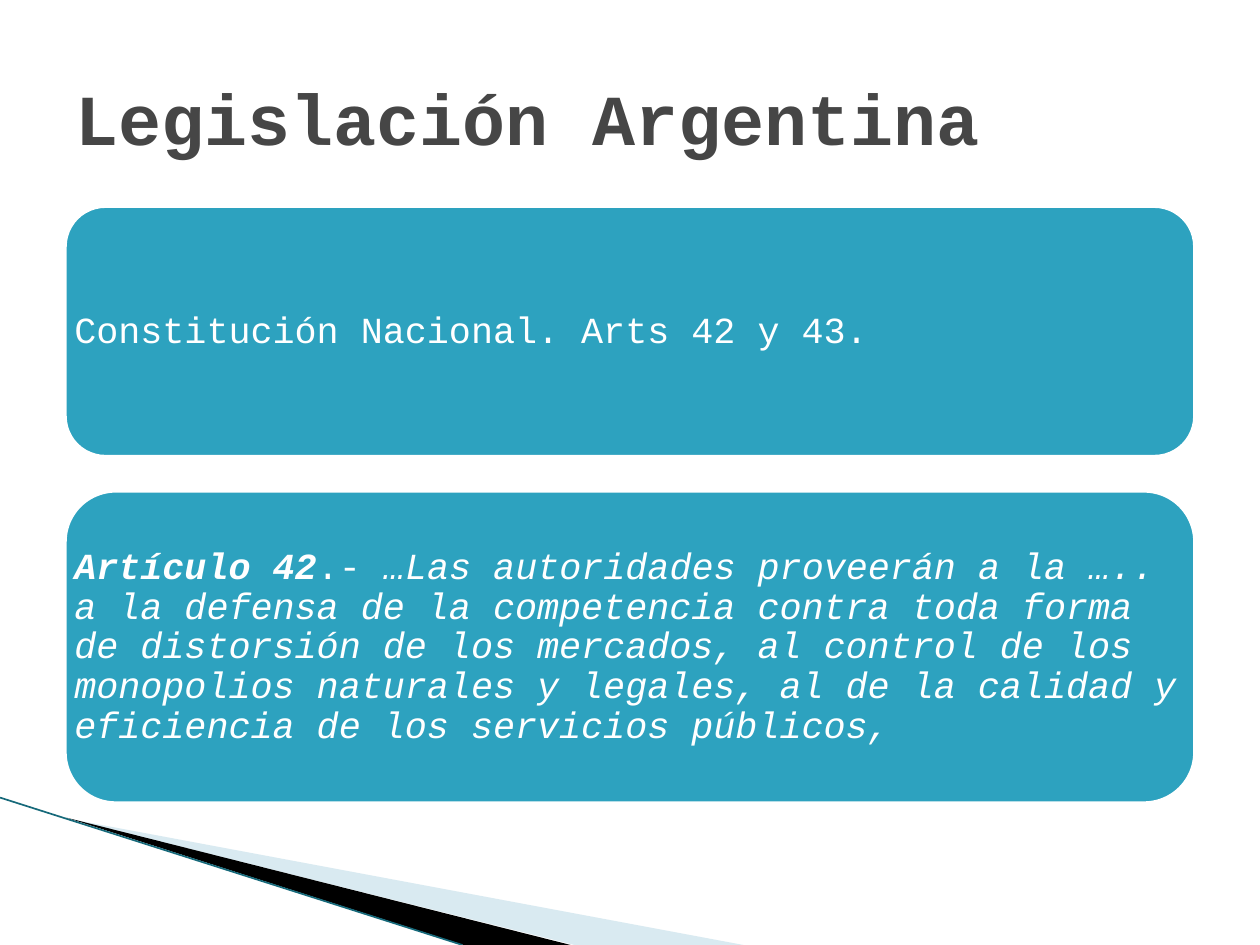
import pptx
import pptx.util
import pptx.dml.color
import pptx.enum.shapes
import pptx.enum.text
import pptx.oxml.ns
import lxml.etree

Inches = pptx.util.Inches
COLORS = {
    "card": "2DA2BF",
    "white": "FFFFFF",
    "title": "464646",
    "pale": "A0CBDC",
    "black": "000000",
    "edge": "16697A",
}
FONT = "Courier New"


def rgb(name):
    return pptx.dml.color.RGBColor.from_string(COLORS[name])


def add_run(p, text, size=21, color="white", bold=False, italic=False):
    r = p.add_run()
    r.text = text
    r.font.name = FONT
    r.font.size = pptx.util.Pt(size)
    r.font.color.rgb = rgb(color)
    r.font.bold = bold
    r.font.italic = italic


def add_wedge(s, points, color, alpha=None):
    start, *rest = [(Inches(x), Inches(y)) for x, y in points]
    builder = s.shapes.build_freeform(*start)
    builder.add_line_segments(rest, close=True)
    sp = builder.convert_to_shape()
    sp.shadow.inherit = False
    sp.fill.solid()
    sp.fill.fore_color.rgb = rgb(color)
    sp.line.fill.background()
    if alpha is not None:
        clr = sp.fill._xPr.find(".//" + pptx.oxml.ns.qn("a:srgbClr"))
        node = lxml.etree.SubElement(clr, pptx.oxml.ns.qn("a:alpha"))
        node.set("val", str(alpha * 1000))


def add_corner(s, left, top, bottom):
    add_wedge(s, [(left + 0.55, top + 0.17), (left + 5.9, bottom),
                  (left + 4.56, bottom)], "pale", alpha=40)
    add_wedge(s, [(left + 0.53, top + 0.16), (left + 4.53, bottom),
                  (left + 3.68, bottom)], "black")
    line = s.shapes.add_connector(
        pptx.enum.shapes.MSO_CONNECTOR.STRAIGHT,
        Inches(left), Inches(top), Inches(left + 3.67), Inches(bottom))
    line.line.color.rgb = rgb("edge")
    line.line.width = pptx.util.Pt(0.95)
    lxml.etree.SubElement(line._element.spPr, pptx.oxml.ns.qn("a:effectLst"))


def add_card(s, left, top, width, height, runs):
    box = [Inches(v) for v in (left, top, width, height)]
    sp = s.shapes.add_shape(
        pptx.enum.shapes.MSO_SHAPE.ROUNDED_RECTANGLE, *box)
    sp.shadow.inherit = False
    sp.fill.solid()
    sp.fill.fore_color.rgb = rgb("card")
    sp.line.color.rgb = rgb("white")
    sp.line.width = pptx.util.Pt(4.33)

    tf = s.shapes.add_textbox(*box).text_frame
    tf.word_wrap = True
    tf.vertical_anchor = pptx.enum.text.MSO_ANCHOR.MIDDLE
    tf.margin_left = tf.margin_right = Inches(0.09)
    tf.margin_top = tf.margin_bottom = Inches(0.09)
    p = tf.paragraphs[0]
    p.line_spacing = 0.9
    for text, style in runs:
        add_run(p, text, **style)


def add_title(s, left, top, width, height, text):
    sp = s.shapes.title
    sp.left, sp.top = Inches(left), Inches(top)
    sp.width, sp.height = Inches(width), Inches(height)
    tf = sp.text_frame
    tf.word_wrap = True
    tf.auto_size = pptx.enum.text.MSO_AUTO_SIZE.NONE
    tf.vertical_anchor = pptx.enum.text.MSO_ANCHOR.MIDDLE
    p = tf.paragraphs[0]
    p.alignment = pptx.enum.text.PP_ALIGN.LEFT
    add_run(p, text, size=41, color="title", bold=True)


def main():
    prs = pptx.Presentation()
    prs.slide_width, prs.slide_height = Inches(10), Inches(7.5)
    s = prs.slides.add_slide(prs.slide_layouts[5])
    add_corner(s, 0, 6.33, 7.5)
    add_card(s, 0.5, 1.62, 9, 2.02,
             [("Constitución Nacional. Arts 42 y 43.", {})])
    add_card(s, 0.5, 3.88, 9, 2.51, [
        ("Artículo 42", {"bold": True, "italic": True}),
        (".-", {}),
        (" …Las autoridades proveerán a la ….. a la defensa de la "
         "competencia contra toda forma de distorsión de los mercados, "
         "al control de los monopolios naturales y legales, al de la "
         "calidad y eficiencia de los servicios públicos,",
         {"italic": True}),
    ])
    add_title(s, 0.5, 0.3, 9, 1.25, "Legislación Argentina")
    prs.save("out.pptx")


if __name__ == "__main__":
    main()
